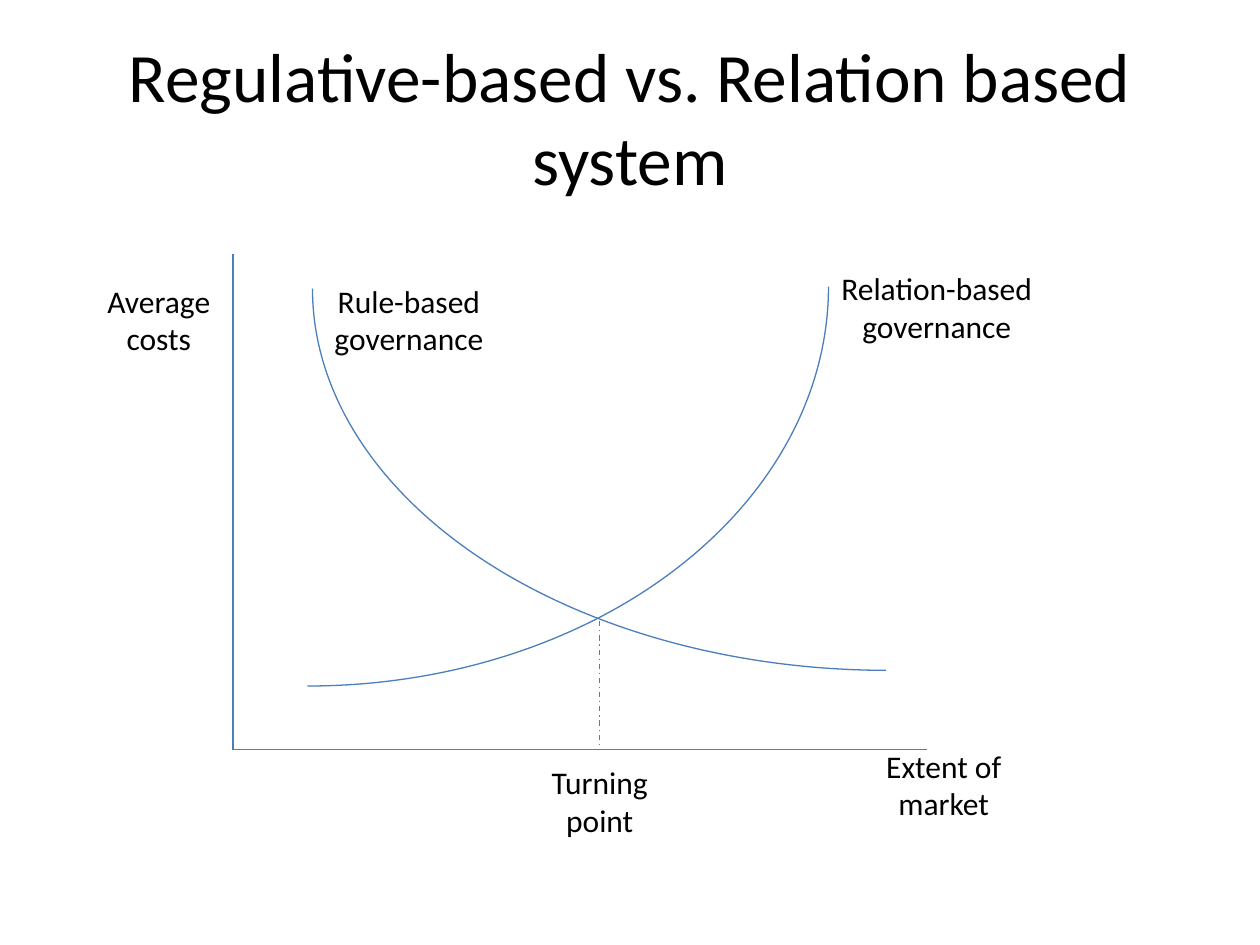
from dataclasses import dataclass
from typing import Optional

from lxml import etree
from pptx import Presentation
from pptx.dml.color import RGBColor
from pptx.enum.dml import MSO_LINE
from pptx.enum.shapes import MSO_CONNECTOR, MSO_SHAPE
from pptx.enum.text import MSO_ANCHOR, PP_ALIGN
from pptx.oxml.ns import qn
from pptx.util import Pt

EMU_PER_PX = 9144
BLANK_LAYOUT = 6
FONT = "Calibri"
BLACK = RGBColor(0x00, 0x00, 0x00)
BLUE = RGBColor(0x4B, 0x7E, 0xBC)
LINE_WIDTH = Pt(0.75)
STRAIGHT = MSO_CONNECTOR.STRAIGHT
ARC = MSO_SHAPE.ARC
DASH_DOT = MSO_LINE.DASH_DOT
CENTER = PP_ALIGN.CENTER
MIDDLE = MSO_ANCHOR.MIDDLE

ORIGIN_X, ORIGIN_Y = 185, 595
TURNING_X = 476


@dataclass(frozen=True)
class Box:
    left: int
    top: int
    width: int
    height: int


@dataclass(frozen=True)
class Label:
    text: str
    box: Box


@dataclass(frozen=True)
class Segment:
    x1: int
    y1: int
    x2: int
    y2: int
    dash: Optional[MSO_LINE] = None


@dataclass(frozen=True)
class Curve:
    box: Box
    rotation: int
    start: float = 162.0


TITLE = Label("Regulative-based vs. Relation based system", Box(50, 30, 900, 125))

AXES = [
    Segment(ORIGIN_X, 202, ORIGIN_X, ORIGIN_Y),
    Segment(ORIGIN_X, ORIGIN_Y, 736, ORIGIN_Y),
]
TURNING_LINE = Segment(TURNING_X, 493, TURNING_X, ORIGIN_Y, DASH_DOT)

COST_CURVES = [
    Curve(Box(248, -74, 913, 606), 180, 162.17),
    Curve(Box(-73, -186, 634, 827), 90),
]

LABELS = [
    Label("Rule-based\ngovernance", Box(244, 218, 161, 71)),
    Label("Turning point", Box(409, 600, 134, 71)),
    Label("Relation-based\ngovernance", Box(657, 208, 173, 71)),
    Label("Extent of market", Box(682, 595, 134, 55)),
    Label("Average costs", Box(67, 218, 118, 71)),
]


def px(length: int) -> int:
    return length * EMU_PER_PX


def place(box: Box) -> tuple[int, int, int, int]:
    return px(box.left), px(box.top), px(box.width), px(box.height)


def add_text(slide, text: str, box: Box, *, size: float = 18, color: RGBColor = BLACK) -> None:
    frame = slide.shapes.add_textbox(*place(box)).text_frame
    frame.word_wrap = True
    frame.vertical_anchor = MIDDLE
    frame.text = text
    for paragraph in frame.paragraphs:
        paragraph.alignment = CENTER
        paragraph.font.name = FONT
        paragraph.font.size = Pt(size)
        paragraph.font.color.rgb = color


def style_line(line) -> None:
    line.color.rgb = BLUE
    line.width = LINE_WIDTH


def draw_segment(slide, segment: Segment) -> None:
    connector = slide.shapes.add_connector(
        STRAIGHT, px(segment.x1), px(segment.y1), px(segment.x2), px(segment.y2)
    )
    style_line(connector.line)
    if segment.dash is not None:
        connector.line.dash_style = segment.dash
    etree.SubElement(connector._element.spPr, qn("a:effectLst"))


def draw_curve(slide, curve: Curve) -> None:
    arc = slide.shapes.add_shape(ARC, *place(curve.box))
    arc.rotation = curve.rotation
    arc.adjustments[0] = curve.start
    arc.shadow.inherit = False
    arc.fill.background()
    style_line(arc.line)


def main() -> None:
    presentation = Presentation()
    presentation.slide_width = px(1000)
    presentation.slide_height = px(750)
    slide = presentation.slides.add_slide(presentation.slide_layouts[BLANK_LAYOUT])

    add_text(slide, TITLE.text, TITLE.box, size=39.6)
    for axis in AXES:
        draw_segment(slide, axis)
    for curve in COST_CURVES:
        draw_curve(slide, curve)
    for label in LABELS:
        add_text(slide, label.text, label.box)
    draw_segment(slide, TURNING_LINE)

    presentation.save("out.pptx")


if __name__ == "__main__":
    main()
